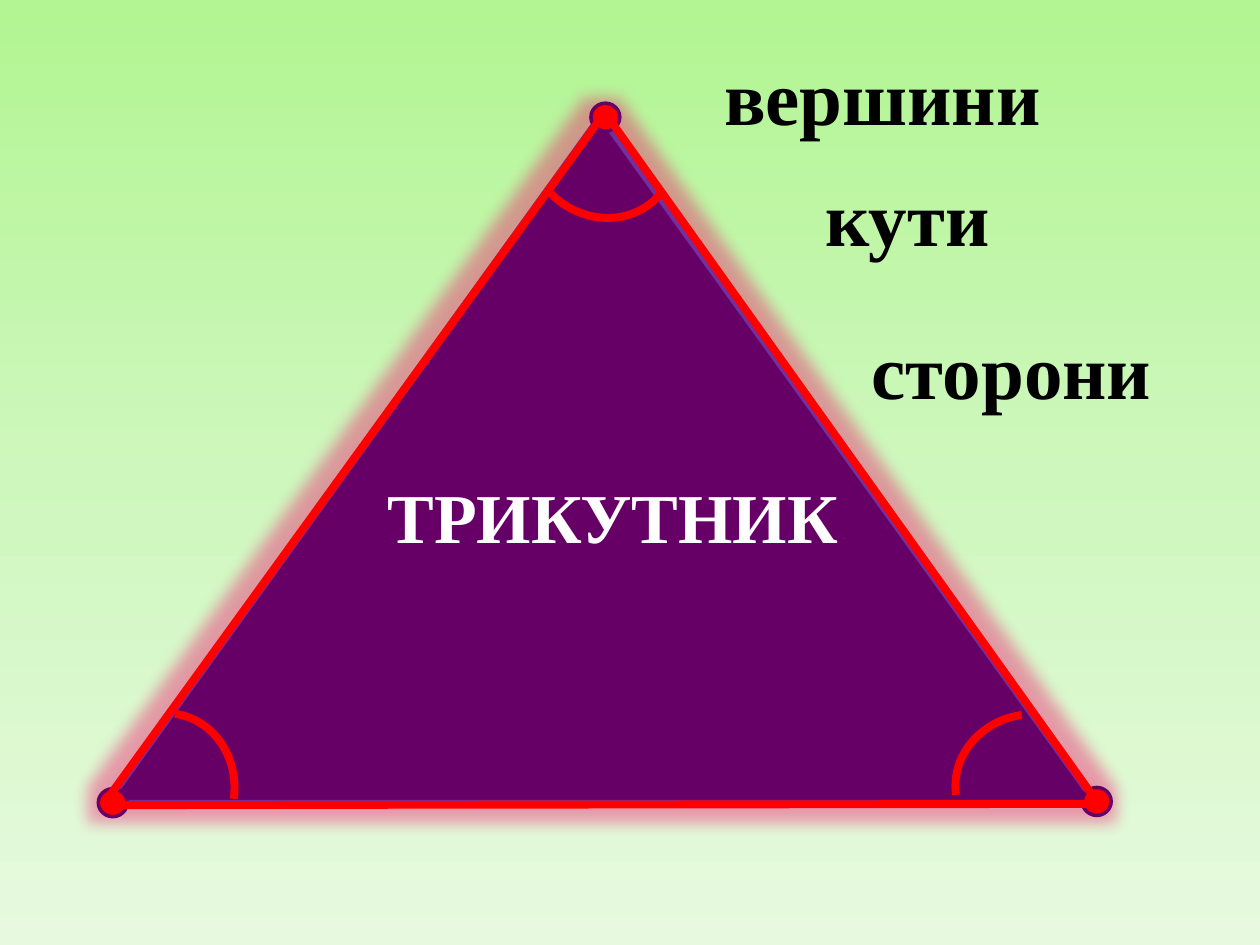
"""Build a slide naming the vertices, angles and sides of a triangle."""
from copy import deepcopy

from lxml.etree import SubElement
from pptx import Presentation
from pptx.dml.color import RGBColor
from pptx.enum.shapes import MSO_CONNECTOR, MSO_SHAPE
from pptx.enum.text import MSO_ANCHOR, PP_ALIGN
from pptx.oxml.ns import qn
from pptx.util import Pt


def color(value):
    return RGBColor.from_string(value)


def add_shape(kind, left, top, width, height, line_color, line_width, fill_color=None):
    shape = slide.shapes.add_shape(kind, Pt(left), Pt(top), Pt(width), Pt(height))
    shape.shadow.inherit = False
    if fill_color:
        shape.fill.solid()
        shape.fill.fore_color.rgb = color(fill_color)
    else:
        shape.fill.background()
    shape.line.color.rgb = color(line_color)
    shape.line.width = Pt(line_width)
    return shape


presentation = Presentation()
presentation.slide_width = Pt(720)
presentation.slide_height = Pt(540)
slide = presentation.slides.add_slide(presentation.slide_layouts[6])

backdrop = slide.background.fill
backdrop.gradient()
backdrop.gradient_angle = 270
stop_list = slide.element.find(".//" + qn("a:gsLst"))
stop_list.append(deepcopy(stop_list[-1]))
for stop, position, shade in zip(
    backdrop.gradient_stops, (0, 0.5, 1), ("B2F592", "CEF7BD", "E7FADF")
):
    stop.position = position
    stop.color.rgb = color(shade)

triangle = add_shape(
    MSO_SHAPE.ISOSCELES_TRIANGLE, 60.5, 66.2, 566.6, 393.1, "7030A0", 4.5, "660066"
)
effects = triangle.element.spPr.find(qn("a:effectLst"))
glow = SubElement(effects, qn("a:glow"), rad=str(Pt(18)))
glow_color = SubElement(glow, qn("a:srgbClr"), val="F00A68")
SubElement(glow_color, qn("a:alpha"), val="40000")

for left, top in ((337.7, 59), (618.5, 450), (56.2, 450.7)):
    add_shape(MSO_SHAPE.OVAL, left, top, 16.5, 16, "660066", 2, "FF0000")

for left, top, rotation, angles in (
    (303.8, 39.6, 129.8, (162, 4.193)),
    (549.4, 404.6, 262, None),
    (54, 407.5, 7.9, None),
):
    angle_arc = add_shape(MSO_SHAPE.ARC, left, top, 80, 87, "FF0000", 4.5)
    angle_arc.rotation = rotation
    if angles:
        angle_arc.adjustments[0], angle_arc.adjustments[1] = angles

for start_x, start_y, end_x, end_y in (
    (59.8, 458.6, 344.2, 66.2),
    (627.8, 459.4, 344.9, 63.4),
    (59.8, 460.1, 627.8, 459.4),
):
    side = slide.shapes.add_connector(
        MSO_CONNECTOR.STRAIGHT, Pt(start_x), Pt(start_y), Pt(end_x), Pt(end_y)
    )
    side.line.color.rgb = color("FF0000")
    side.line.width = Pt(4.5)
    SubElement(side.element.spPr, qn("a:effectLst"))

for wording, left, top, width, height, size, ink in (
    ("вершини", 382.3, 25.9, 244.1, 56.9, 44, "000000"),
    ("кути", 447.8, 95, 141.8, 56.9, 44, "000000"),
    ("сторони", 478.8, 182.2, 198.7, 56.9, 44, "000000"),
    ("ТРИКУТНИК", 213.8, 258.5, 272.9, 72, 40, "FFFFFF"),
):
    label = slide.shapes.add_textbox(Pt(left), Pt(top), Pt(width), Pt(height))
    frame = label.text_frame
    frame.word_wrap = True
    frame.vertical_anchor = MSO_ANCHOR.MIDDLE
    paragraph = frame.paragraphs[0]
    paragraph.text = wording
    paragraph.alignment = PP_ALIGN.CENTER
    paragraph.font.name = "Times New Roman"
    paragraph.font.size = Pt(size)
    paragraph.font.bold = True
    paragraph.font.color.rgb = color(ink)

presentation.save("out.pptx")
